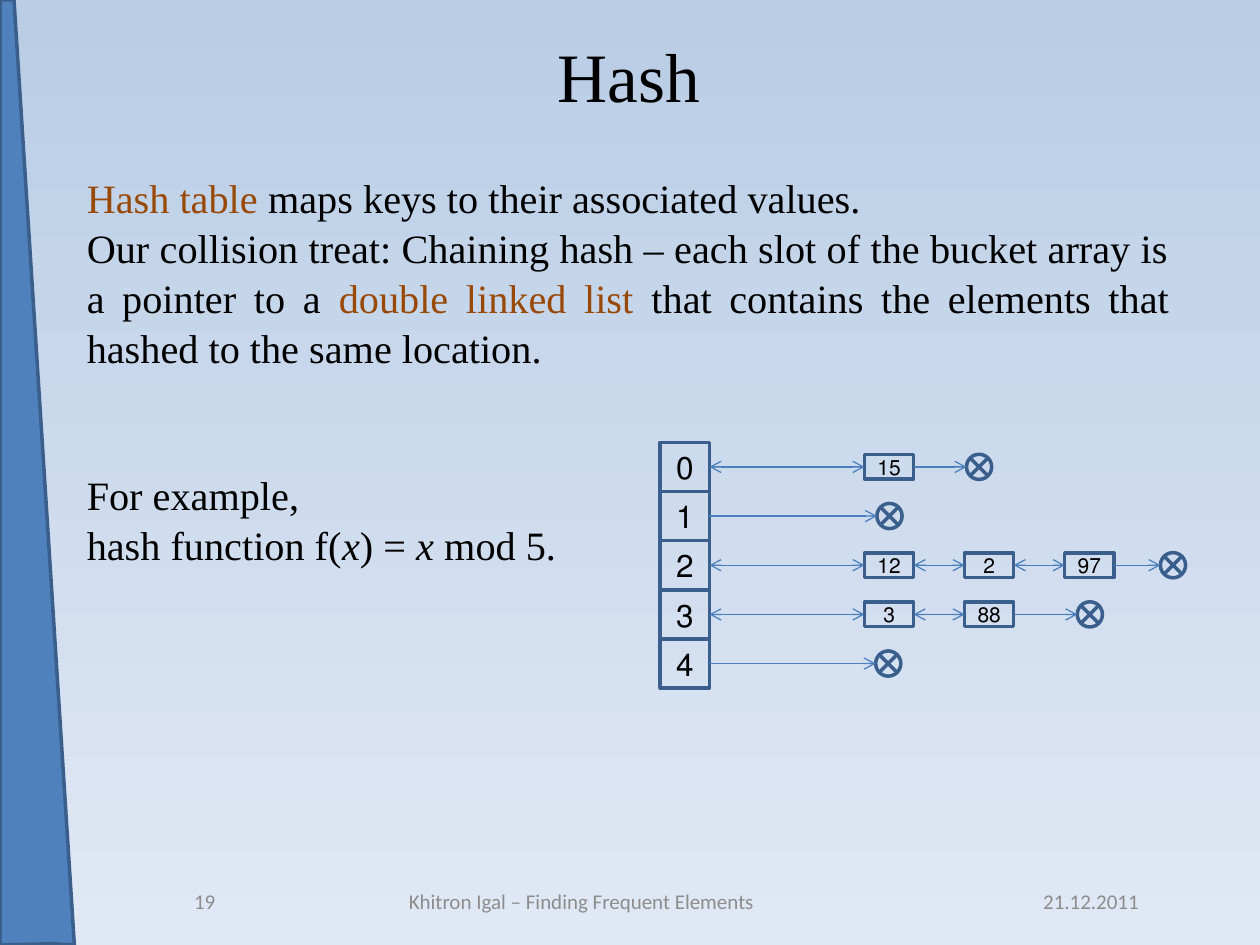
from dataclasses import dataclass

from lxml.etree import SubElement
from pptx import Presentation
from pptx.dml.color import RGBColor
from pptx.enum.shapes import MSO_CONNECTOR, MSO_SHAPE
from pptx.enum.text import MSO_ANCHOR, PP_ALIGN
from pptx.oxml.ns import qn
from pptx.util import Pt


@dataclass(frozen=True)
class Theme:
    serif: str = "Times New Roman"
    sans: str = "Calibri"
    ink: str = "000000"
    accent: str = "984807"
    muted: str = "8C8C8C"
    band: str = "4F81BD"
    edge: str = "3A5F8C"
    arrow: str = "4B7EBC"
    sky: tuple = ("B9CDE5", "E1E8F5")
    title: float = 39.6
    body: float = 23
    slot: float = 18
    small: float = 12
    border: float = 2
    thin: float = 0.75


def apply(target, values):
    for name, value in values.items():
        setattr(target, name, value)


def color(code):
    return RGBColor.from_string(code)


class Painter:
    def __init__(self, slide, theme):
        self.slide = slide
        self.shapes = slide.shapes
        self.theme = theme

    def backdrop(self):
        fill = self.slide.background.fill
        fill.gradient()
        fill.gradient_angle = 270
        for stop, code, place in zip(fill.gradient_stops, self.theme.sky, (0, 1)):
            stop.position = place
            stop.color.rgb = color(code)

    def outline(self, shape, fill=None):
        shape.shadow.inherit = False
        if fill:
            shape.fill.solid()
            shape.fill.fore_color.rgb = color(fill)
        else:
            shape.fill.background()
        shape.line.color.rgb = color(self.theme.edge)
        shape.line.width = Pt(self.theme.border)
        return shape

    def band(self, points):
        first, *rest = [(Pt(x), Pt(y)) for x, y in points]
        build = self.shapes.build_freeform(*first)
        build.add_line_segments(rest, close=True)
        return self.outline(build.convert_to_shape(), self.theme.band)

    def letter(self, par, runs, size, face):
        for words, code, slant in runs:
            run = par.add_run()
            run.text = words
            apply(run.font, {"size": Pt(size), "name": face, "italic": slant})
            run.font.color.rgb = color(code)

    def text(self, box, pars, size, face, align, anchor=MSO_ANCHOR.MIDDLE, style=None):
        frame = self.shapes.add_textbox(*map(Pt, box)).text_frame
        apply(frame, {"word_wrap": True, "vertical_anchor": anchor})
        for place, (runs, gap) in enumerate(pars):
            par = frame.add_paragraph() if place else frame.paragraphs[0]
            apply(par, {"alignment": align, "space_before": Pt(gap), **(style or {})})
            self.letter(par, runs, size, face)

    def cell(self, left, middle, width, height, label, size):
        box = (left, middle - height / 2, width, height)
        shape = self.outline(self.shapes.add_shape(MSO_SHAPE.RECTANGLE, *map(Pt, box)))
        frame = shape.text_frame
        margins = {f"margin_{side}": 0 for side in ("left", "top", "right", "bottom")}
        apply(frame, {**margins, "word_wrap": False, "vertical_anchor": MSO_ANCHOR.MIDDLE})
        par = frame.paragraphs[0]
        par.alignment = PP_ALIGN.CENTER
        par._p.get_or_add_pPr().set("rtl", "1")
        self.letter(par, [(str(label), self.theme.ink, False)], size, self.theme.sans)
        return shape

    def null(self, left, middle, size):
        box = (left, middle - size / 2, size, size)
        kind = MSO_SHAPE.FLOWCHART_SUMMING_JUNCTION
        return self.outline(self.shapes.add_shape(kind, *map(Pt, box)))

    def link(self, start, end, both):
        middle = start.top + start.height // 2
        line = self.shapes.add_connector(
            MSO_CONNECTOR.STRAIGHT, start.left + start.width, middle, end.left, middle
        )
        line.begin_connect(start, 3)
        if both:
            line.end_connect(end, 1)
        line.line.color.rgb = color(self.theme.arrow)
        line.line.width = Pt(self.theme.thin)
        stroke = line.line._get_or_add_ln()
        for tip in ("a:headEnd", "a:tailEnd") if both else ("a:tailEnd",):
            SubElement(stroke, qn(tip), type="arrow")
        SubElement(line._element.spPr, qn("a:effectLst"))


def main():
    deck = Presentation()
    apply(deck, {"slide_width": Pt(720), "slide_height": Pt(540)})
    theme = Theme()
    pen = Painter(deck.slides.add_slide(deck.slide_layouts[6]), theme)

    pen.backdrop()
    pen.band([(0, 0), (8, 0), (42.5, 540), (30, 539.3), (0, 540)])

    def plain(words):
        return words, theme.ink, False

    def strong(words):
        return words, theme.accent, False

    def slant(words):
        return words, theme.ink, True

    center = PP_ALIGN.CENTER
    pen.text((54.7, 14.4, 609, 56.9), [([plain("Hash")], 0)], theme.title, theme.serif, center)
    body = [
        ([strong("Hash table "), plain("maps keys to their associated values.")], 0),
        ([plain("Our collision treat: Chaining hash – each slot of the bucket array is a pointer to a "),
          strong("double linked list "),
          plain("that contains the elements that hashed to the same location.")], 0),
        ([plain("For example,")], 55),
        ([plain("hash function f("), slant("x"), plain(") = "), slant("x"), plain(" mod 5.")], 0),
    ]
    pen.text((42.5, 94.3, 633, 350), body, theme.body, theme.serif, PP_ALIGN.JUSTIFY,
             MSO_ANCHOR.TOP, {"line_spacing": 1.04})

    footer = [
        (33.1, 167.8, "19", center),
        (218.2, 228.2, "Khitron Igal – Finding Frequent Elements", center),
        (589, 131, "21.12.2011", PP_ALIGN.LEFT),
    ]
    for left, width, words, align in footer:
        pen.text((left, 500.4, width, 28.8), [([(words, theme.muted, False)], 0)],
                 theme.small, theme.sans, align)

    side, pitch, top = 28.1, 28.1, 266.8
    first, step = 494, 57.2
    chains = [([15], 552.3), ([], 501.1), ([12, 2, 97], 663.1), ([3, 88], 615.6), ([], 500.4)]
    for slot, (keys, stop) in enumerate(chains):
        middle = top + slot * pitch
        last = pen.cell(377.3, middle, side, side, slot, theme.slot)
        for place, key in enumerate(keys):
            node = pen.cell(first + place * step, middle, side, side / 2, key, theme.small)
            pen.link(last, node, True)
            last = node
        pen.link(last, pen.null(stop, middle, 14.4), False)

    deck.save("out.pptx")


if __name__ == "__main__":
    main()
